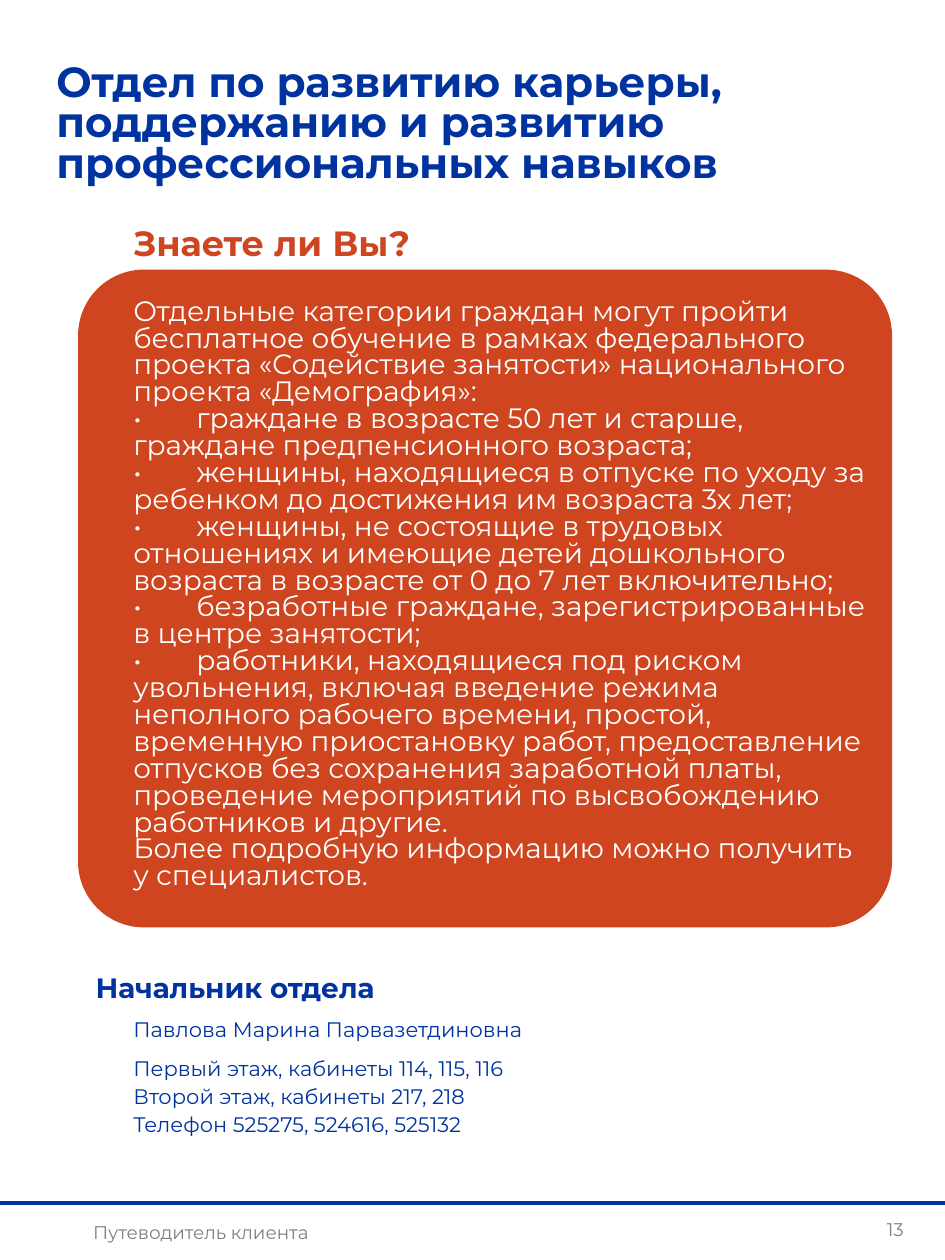
from lxml import etree
from pptx import Presentation
from pptx.dml.color import RGBColor
from pptx.enum import shapes, text
from pptx.oxml import ns
from pptx.util import Inches, Pt

BLUE, ORANGE, WHITE, GREY = "0033A0", "CF4520", "FFFFFF", "808080"
FONT = "Montserrat"

TITLE = ["Отдел по развитию карьеры,", "поддержанию и развитию профессиональных навыков"]
QUESTION = ["Знаете ли Вы?"]
INTRO = (
    "Отдельные категории граждан могут пройти бесплатное обучение в рамках федерального "
    "проекта «Содействие занятости» национального проекта «Демография»:"
)
GROUPS = [
    "граждане в возрасте 50 лет и старше, граждане предпенсионного возраста;",
    "женщины, находящиеся в отпуске по уходу за ребенком до достижения им возраста 3х лет;",
    "женщины, не состоящие в трудовых отношениях и имеющие детей дошкольного возраста "
    "в возрасте от 0 до 7 лет включительно;",
    "безработные граждане, зарегистрированные в центре занятости;",
    "работники, находящиеся под риском увольнения, включая введение режима неполного "
    "рабочего времени, простой, временную приостановку работ, предоставление отпусков "
    "без сохранения заработной платы, проведение мероприятий по высвобождению "
    "работников и другие.",
]
CLOSING = "Более подробную информацию можно получить у специалистов."
HEAD_LABEL = ["Начальник отдела"]
HEAD_NAME = ["Павлова Марина Парвазетдиновна"]
CONTACTS = [
    "Первый этаж, кабинеты 114, 115, 116",
    "Второй этаж, кабинеты 217, 218",
    "Телефон 525275, 524616, 525132",
]
FOOTER, PAGE_NUMBER = ["Путеводитель клиента"], ["13"]


def color(value):
    return RGBColor.from_string(value)


def add_tab_stop(para, position):
    tabs = etree.SubElement(para._p.get_or_add_pPr(), ns.qn("a:tabLst"))
    etree.SubElement(tabs, ns.qn("a:tab"), pos=str(Inches(position)), algn="l")


def add_text(page, lines, at, size, ink=BLUE, bold=False, align=text.PP_ALIGN.LEFT, spacing=1.0):
    box = page.shapes.add_textbox(*map(Inches, at))
    frame = box.text_frame
    frame.word_wrap = True
    frame.auto_size = text.MSO_AUTO_SIZE.SHAPE_TO_FIT_TEXT
    for index, line in enumerate(lines):
        para = frame.add_paragraph() if index else frame.paragraphs[0]
        para.alignment = align
        para.line_spacing = spacing
        if "\t" in line:
            add_tab_stop(para, 0.5)
        span = para.add_run()
        span.text = line
        span.font.name = FONT
        span.font.size = Pt(size)
        span.font.bold = bold
        span.font.color.rgb = color(ink)


def add_rule(page, width, top):
    rule = page.shapes.add_connector(
        shapes.MSO_CONNECTOR.STRAIGHT, 0, Inches(top), width, Inches(top)
    )
    rule.line.color.rgb = color(BLUE)
    rule.line.width = Pt(2.25)
    etree.SubElement(rule._element.spPr, ns.qn("a:effectLst"))


def add_panel(page, at):
    panel = page.shapes.add_shape(shapes.MSO_SHAPE.ROUNDED_RECTANGLE, *map(Inches, at))
    panel.adjustments[0] = 0.1
    panel.shadow.inherit = False
    panel.fill.solid()
    panel.fill.fore_color.rgb = color(ORANGE)
    panel.line.fill.background()


def main():
    deck = Presentation()
    deck.slide_width, deck.slide_height = Inches(7.5), Inches(10)
    page = deck.slides.add_slide(deck.slide_layouts[6])
    center, justify = text.PP_ALIGN.CENTER, text.PP_ALIGN.JUSTIFY
    left, width = 0.96, 4.08
    body = [INTRO, *(f"•\t{group}" for group in GROUPS), CLOSING]

    add_rule(page, deck.slide_width, 9.55)
    add_text(page, FOOTER, (-0.64, 9.64, 4.47, 0.28), 10.5, ink=GREY, align=center)
    add_text(page, TITLE, (0.35, 0.47, 6.87, 1.07), 24, bold=True, spacing=0.8)
    add_panel(page, (0.62, 2.14, 6.46, 5.22))
    add_text(page, body, (left, 2.33, 6.04, 5.03), 16, ink=WHITE, spacing=0.8)
    add_text(page, QUESTION, (left, 1.71, width, 0.44), 20, ink=ORANGE, bold=True)
    add_text(page, CONTACTS, (left, 8.31, width, 0.75), 12, align=justify, spacing=1.1)
    add_text(page, HEAD_LABEL, (0.66, 7.65, width, 0.37), 16, bold=True)
    add_text(page, HEAD_NAME, (left, 8, width, 0.31), 12, align=justify, spacing=1.1)
    add_text(page, PAGE_NUMBER, (6.88, 9.62, 0.45, 0.28), 10.5, ink=GREY, align=center)
    deck.save("out.pptx")


if __name__ == "__main__":
    main()
